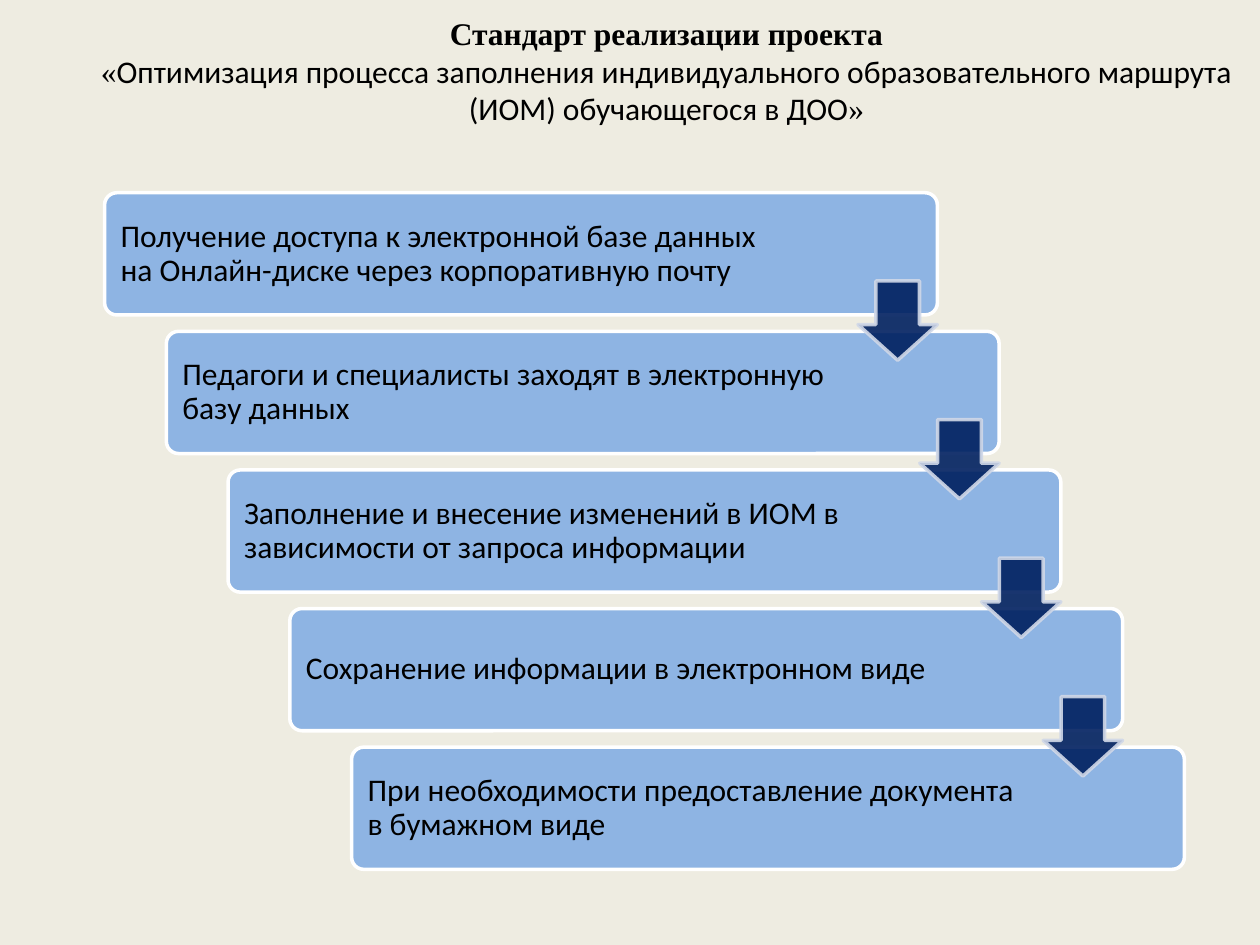
import dataclasses

import lxml.etree
import pptx
import pptx.dml.color
import pptx.enum.shapes
import pptx.enum.text
import pptx.oxml.ns
import pptx.util

Inches = pptx.util.Inches
ShapeKind = pptx.enum.shapes.MSO_SHAPE
Align = pptx.enum.text.PP_ALIGN


@dataclasses.dataclass(frozen=True)
class Theme:
    background: str = "EEECE1"
    step_fill: str = "8EB4E3"
    step_line: str = "FFFFFF"
    arrow_fill: str = "002060"
    arrow_line: str = "D0D8E8"
    text: str = "000000"
    body_font: str = "Calibri"
    heading_font: str = "Times New Roman"
    text_size: int = 18
    line_width: int = 2
    arrow_opacity: int = 90


THEME = Theme()

# Staircase grid, in inches
LEFT, TOP = 0.83, 1.53
STEP_X, STEP_Y = 0.49, 1.1
STEP_WIDTH, STEP_HEIGHT = 6.61, 0.97
ARROW_SIZE, ARROW_DROP = 0.63, 0.7

STEPS = [
    "Получение доступа к электронной базе данных на Онлайн-диске через корпоративную почту",
    "Педагоги и специалисты заходят в электронную базу данных",
    "Заполнение и внесение изменений в ИОМ в зависимости от запроса информации",
    "Сохранение информации в электронном виде",
    "При необходимости предоставление документа в бумажном виде",
]


def rgb(color):
    return pptx.dml.color.RGBColor.from_string(color)


def add_text(para, text, font=THEME.body_font, size=THEME.text_size,
             color=THEME.text, bold=False):
    span = para.add_run()
    span.text = text
    span.font.name = font
    span.font.size = pptx.util.Pt(size)
    span.font.color.rgb = rgb(color)
    span.font.bold = bold


def set_opacity(shape, percent):
    """Apply one opacity to both the fill and the outline."""
    for color in shape._element.spPr.iter(pptx.oxml.ns.qn("a:srgbClr")):
        alpha = lxml.etree.SubElement(color, pptx.oxml.ns.qn("a:alpha"))
        alpha.set("val", str(percent * 1000))


def add_block(page, kind, left, top, width, height, fill, line, adjustments):
    shape = page.shapes.add_shape(
        kind, Inches(left), Inches(top), Inches(width), Inches(height))
    shape.shadow.inherit = False
    shape.fill.solid()
    shape.fill.fore_color.rgb = rgb(fill)
    shape.line.color.rgb = rgb(line)
    shape.line.width = pptx.util.Pt(THEME.line_width)
    for index, value in enumerate(adjustments):
        shape.adjustments[index] = value
    return shape


def add_step(page, index, text):
    box = add_block(page, ShapeKind.ROUNDED_RECTANGLE,
                    LEFT + index * STEP_X, TOP + index * STEP_Y,
                    STEP_WIDTH, STEP_HEIGHT,
                    THEME.step_fill, THEME.step_line, [0.1])
    frame = box.text_frame
    frame.word_wrap = True
    frame.vertical_anchor = pptx.enum.text.MSO_ANCHOR.MIDDLE
    frame.margin_left, frame.margin_right = Inches(0.1), Inches(1.25)
    para = frame.paragraphs[0]
    para.alignment = Align.LEFT
    para.line_spacing = 0.9
    add_text(para, text)


def add_arrow(page, index):
    """Add the arrow from a step to the next, flush with the step's right side."""
    arrow = add_block(page, ShapeKind.DOWN_ARROW,
                      LEFT + index * STEP_X + STEP_WIDTH - ARROW_SIZE,
                      TOP + index * STEP_Y + ARROW_DROP,
                      ARROW_SIZE, ARROW_SIZE,
                      THEME.arrow_fill, THEME.arrow_line, [0.55, 0.45])
    # The head length comes first, then the shaft width
    arrow.adjustments[0], arrow.adjustments[1] = 0.55, 0.45
    set_opacity(arrow, THEME.arrow_opacity)


def fill_title(page):
    title = page.shapes.title
    title.left, title.top = Inches(0.56), Inches(0.21)
    title.width, title.height = Inches(9.46), Inches(0.7)
    frame = title.text_frame
    frame.word_wrap = True
    frame.auto_size = pptx.enum.text.MSO_AUTO_SIZE.NONE
    frame.vertical_anchor = pptx.enum.text.MSO_ANCHOR.MIDDLE
    para = frame.paragraphs[0]
    para.alignment = Align.CENTER
    add_text(para, "Стандарт реализации проекта", font=THEME.heading_font, bold=True)
    para.add_line_break()
    add_text(para, "«", font=THEME.heading_font)
    add_text(para, "Оптимизация процесса заполнения индивидуального "
                   "образовательного маршрута (ИОМ) обучающегося в ДОО")
    add_text(para, "»", font=THEME.heading_font)


def main():
    deck = pptx.Presentation()
    deck.slide_width, deck.slide_height = Inches(10), Inches(7.5)
    page = deck.slides.add_slide(deck.slide_layouts.get_by_name("Title Only"))
    page.background.fill.solid()
    page.background.fill.fore_color.rgb = rgb(THEME.background)
    fill_title(page)
    for index, text in enumerate(STEPS):
        add_step(page, index, text)
    for index in range(len(STEPS) - 1):
        add_arrow(page, index)
    deck.save("out.pptx")


if __name__ == "__main__":
    main()
